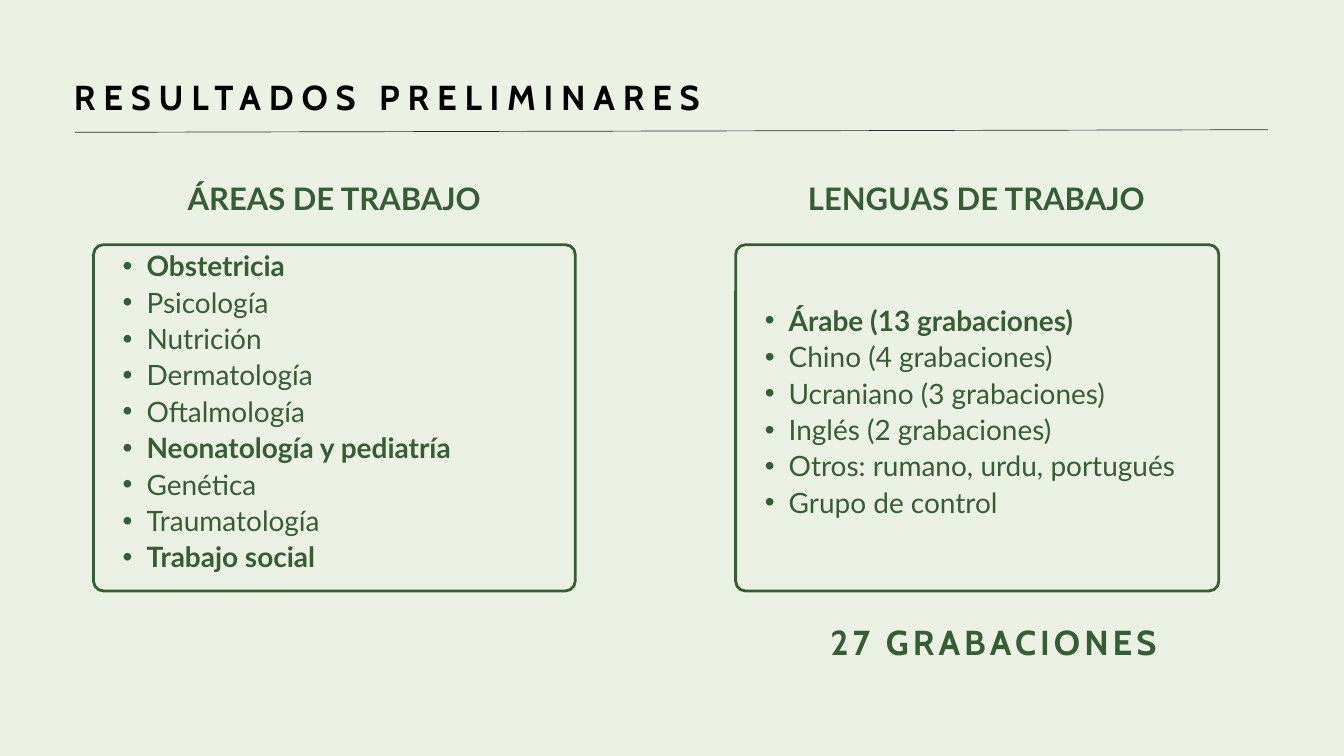
from lxml import etree
from pptx import Presentation
from pptx.dml.color import RGBColor
from pptx.enum.shapes import MSO_CONNECTOR, MSO_SHAPE
from pptx.enum.text import MSO_ANCHOR, MSO_AUTO_SIZE, PP_ALIGN
from pptx.oxml.ns import qn
from pptx.util import Pt

LEFT, CENTER = PP_ALIGN.LEFT, PP_ALIGN.CENTER
TOP, MIDDLE = MSO_ANCHOR.TOP, MSO_ANCHOR.MIDDLE
NO_AUTOSIZE = MSO_AUTO_SIZE.NONE
ROUNDED = MSO_SHAPE.ROUNDED_RECTANGLE
STRAIGHT = MSO_CONNECTOR.STRAIGHT

COMPARISON_LAYOUT = 4
COLORS = {"background": "ECF2E3", "green": "365E34", "black": "000000", "rule": "2B2C30"}

FRAME_TOP, FRAME_HEIGHT = 262.2, 371
LIST_TOP, LIST_HEIGHT = 245, 388
CORNER_RADIUS = 10.6

# (heading, frame left, frame width, items as (text, bold))
COLUMNS = [
    ("ÁREAS DE TRABAJO", 100.2, 516.2, [
        ("Obstetricia", True),
        ("Psicología", False),
        ("Nutrición", False),
        ("Dermatología", False),
        ("Oftalmología", False),
        ("Neonatología y pediatría", True),
        ("Genética", False),
        ("Traumatología", False),
        ("Trabajo social", True),
    ]),
    ("LENGUAS DE TRABAJO", 788.2, 517.7, [
        ("Árabe (13 grabaciones)", True),
        ("Chino (4 grabaciones)", False),
        ("Ucraniano (3 grabaciones)", False),
        ("Inglés (2 grabaciones)", False),
        ("Otros: rumano, urdu, portugués", False),
        ("Grupo de control", False),
    ]),
]


def color(name):
    return RGBColor.from_string(COLORS[name])


def place(box, left, top, width, height, anchor=TOP, inset=0):
    """Position a text shape and reset its frame."""
    box.left, box.top, box.width, box.height = Pt(left), Pt(top), Pt(width), Pt(height)
    frame = box.text_frame
    frame.auto_size = NO_AUTOSIZE
    frame.word_wrap = True
    frame.vertical_anchor = anchor
    frame.margin_left = frame.margin_right = Pt(inset)
    frame.margin_top = frame.margin_bottom = Pt(inset)


def write(para, text, *, size, line, font="Lato", fill="green", bold=True,
          align=LEFT, tracking=0):
    para.alignment = align
    para.line_spacing = Pt(line)
    para.space_before = para.space_after = Pt(0)
    span = para.add_run()
    span.text = text
    span.font.name = font
    span.font.size = Pt(size)
    span.font.bold = bold
    span.font.color.rgb = color(fill)
    if tracking:
        span.font._element.set("spc", str(round(tracking * 100)))


def add_bullet(para):
    para.level = 1
    properties = para._p.get_or_add_pPr()
    properties.set("marL", str(Pt(51)))
    properties.set("indent", str(Pt(-25.5)))
    etree.SubElement(properties, qn("a:buFont")).set("typeface", "Arial")
    etree.SubElement(properties, qn("a:buChar")).set("char", "•")


def add_rule(page, start, end):
    rule = page.shapes.add_connector(STRAIGHT, *map(Pt, start + end))
    rule.line.color.rgb = color("rule")
    rule.line.width = Pt(0.75)
    etree.SubElement(rule._element.spPr, qn("a:effectLst"))


def add_frame(page, left, width):
    frame = page.shapes.add_shape(ROUNDED, Pt(left), Pt(FRAME_TOP), Pt(width), Pt(FRAME_HEIGHT))
    frame.adjustments[0] = CORNER_RADIUS / FRAME_HEIGHT
    frame.shadow.inherit = False
    frame.fill.background()
    frame.line.color.rgb = color("green")
    frame.line.width = Pt(3)


def fill_column(page, heading_box, list_box, heading, left, width, items):
    add_frame(page, left, width)
    place(heading_box, left + 25.2, 189.4, 465.8, 42.5)
    write(heading_box.text_frame.paragraphs[0], heading, size=33.2, line=43.1, align=CENTER)

    place(list_box, left, LIST_TOP, width, LIST_HEIGHT, anchor=MIDDLE, inset=5.8)
    frame = list_box.text_frame
    for index, (text, bold) in enumerate(items):
        para = frame.add_paragraph() if index else frame.paragraphs[0]
        write(para, text, size=30, line=39, bold=bold)
        add_bullet(para)


def main():
    deck = Presentation()
    deck.slide_width, deck.slide_height = Pt(1440), Pt(810)
    page = deck.slides.add_slide(deck.slide_layouts[COMPARISON_LAYOUT])
    page.background.fill.solid()
    page.background.fill.fore_color.rgb = color("background")

    title, *bodies = page.placeholders
    place(title, 79.2, 74.2, 1278, 51)
    write(title.text_frame.paragraphs[0], "RESULTADOS PRELIMINARES", size=37.1, line=52,
          font="Cabin", fill="black", tracking=8.4)
    add_rule(page, (80.6, 141.8), (1358.6, 139))

    for heading_box, list_box, column in zip(bodies[::2], bodies[1::2], COLUMNS):
        fill_column(page, heading_box, list_box, *column)

    total = page.shapes.add_textbox(0, 0, 0, 0)
    place(total, 850.3, 657.4, 428.4, 48.2)
    write(total.text_frame.paragraphs[0], "27 GRABACIONES", size=37.1, line=52,
          font="Cabin", align=CENTER, tracking=4.3)

    deck.save("out.pptx")


if __name__ == "__main__":
    main()
